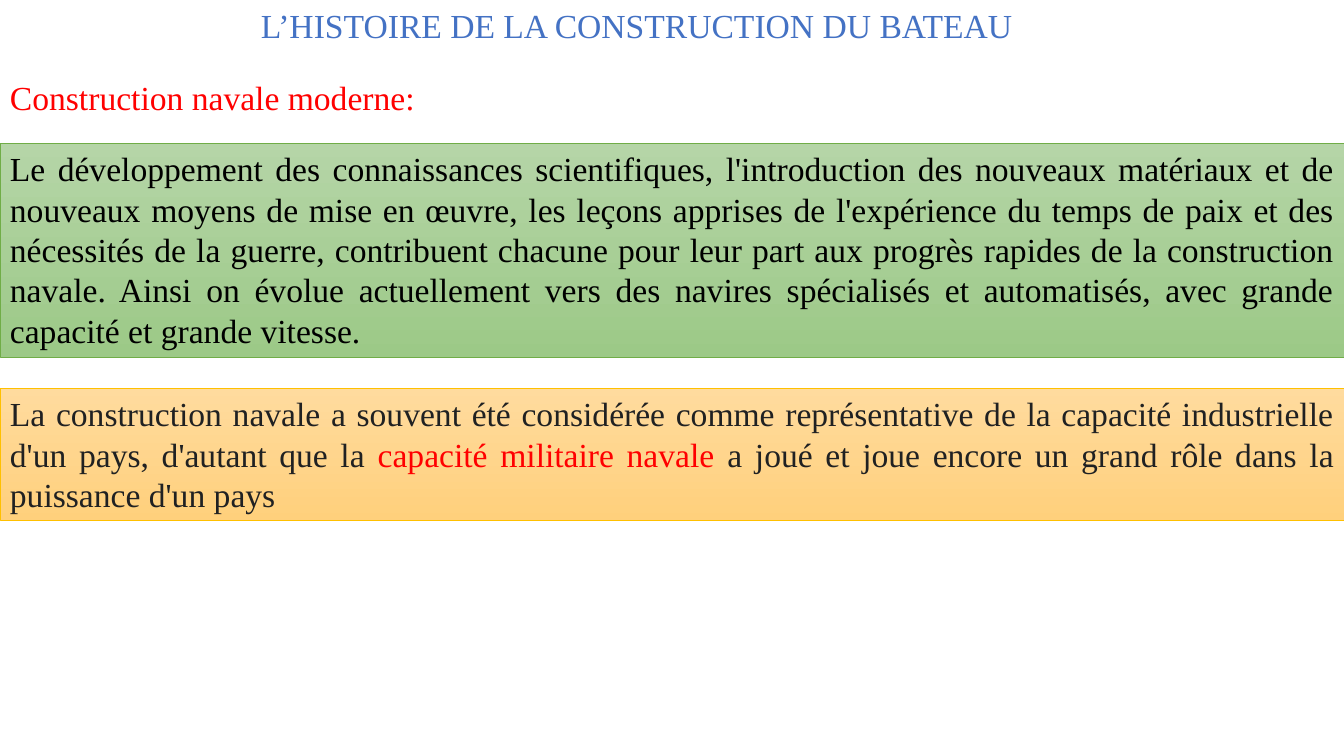
from pptx import Presentation
from pptx.dml.color import RGBColor
from pptx.enum.shapes import MSO_SHAPE
from pptx.enum.text import MSO_ANCHOR, MSO_AUTO_SIZE, PP_ALIGN
from pptx.util import Pt

SLIDE_W, SLIDE_H = 960, 540
FONT, SIZE = "Times New Roman", 24
COLORS = {
    "title": "4472C4",
    "accent": "FF0000",
    "black": "000000",
    "body": "202122",
    "green_top": "B5D5A7",
    "green_bottom": "9CC987",
    "green_line": "70AD47",
    "gold_top": "FFDB9E",
    "gold_bottom": "FFD07C",
    "gold_line": "FFC000",
}


def color(name):
    return RGBColor.from_string(COLORS[name])


def write(s, runs, align, wrap):
    """Fill a shape with one paragraph of (text, colour name) runs."""
    tf = s.text_frame
    tf.word_wrap = wrap
    tf.auto_size = MSO_AUTO_SIZE.SHAPE_TO_FIT_TEXT
    tf.vertical_anchor = MSO_ANCHOR.TOP
    p = tf.paragraphs[0]
    p.alignment = align
    for text, name in runs:
        r = p.add_run()
        r.text = text
        r.font.name = FONT
        r.font.size = Pt(SIZE)
        r.font.color.rgb = color(name)


def add_heading(sp, left, top, width, text, name, align):
    s = sp.add_textbox(Pt(left), Pt(top), Pt(width), Pt(36.35))
    write(s, [(text, name)], align, False)


def add_panel(sp, top, height, tone, runs):
    """Add a full-width box shaded from top to bottom in the given tone."""
    s = sp.add_shape(MSO_SHAPE.RECTANGLE, 0, Pt(top), Pt(SLIDE_W), Pt(height))
    s.shadow.inherit = False
    s.fill.gradient()
    s.fill.gradient_angle = 270
    for stop, end in zip(s.fill.gradient_stops, ("top", "bottom")):
        stop.color.rgb = color(f"{tone}_{end}")
    s.line.color.rgb = color(f"{tone}_line")
    s.line.width = Pt(0.5)
    write(s, runs, PP_ALIGN.JUSTIFY, True)


def main():
    prs = Presentation()
    prs.slide_width, prs.slide_height = Pt(SLIDE_W), Pt(SLIDE_H)
    sp = prs.slides.add_slide(prs.slide_layouts[6]).shapes

    add_heading(sp, 166.3, 0, 576.7, "L’HISTOIRE DE LA CONSTRUCTION DU BATEAU",
                "title", PP_ALIGN.CENTER)
    add_panel(sp, 102.3, 152.7, "green", [
        ("Le développement des connaissances scientifiques, l'introduction des "
         "nouveaux matériaux et de nouveaux moyens de mise en œuvre, les leçons "
         "apprises de l'expérience du temps de paix et des nécessités de la "
         "guerre, contribuent chacune pour leur part aux progrès rapides de la "
         "construction navale. Ainsi on évolue actuellement vers des navires "
         "spécialisés et automatisés, avec grande capacité et grande vitesse.",
         "black"),
    ])
    add_panel(sp, 277.3, 94.5, "gold", [
        ("La construction navale a souvent été considérée comme représentative "
         "de la capacité industrielle d'un pays, d'autant que la ", "body"),
        ("capacité militaire navale ", "accent"),
        ("a joué et joue encore un grand rôle dans la puissance d'un pays",
         "body"),
    ])
    add_heading(sp, 0, 51.1, 306, "Construction navale moderne:",
                "accent", PP_ALIGN.JUSTIFY)

    prs.save("out.pptx")


if __name__ == "__main__":
    main()
